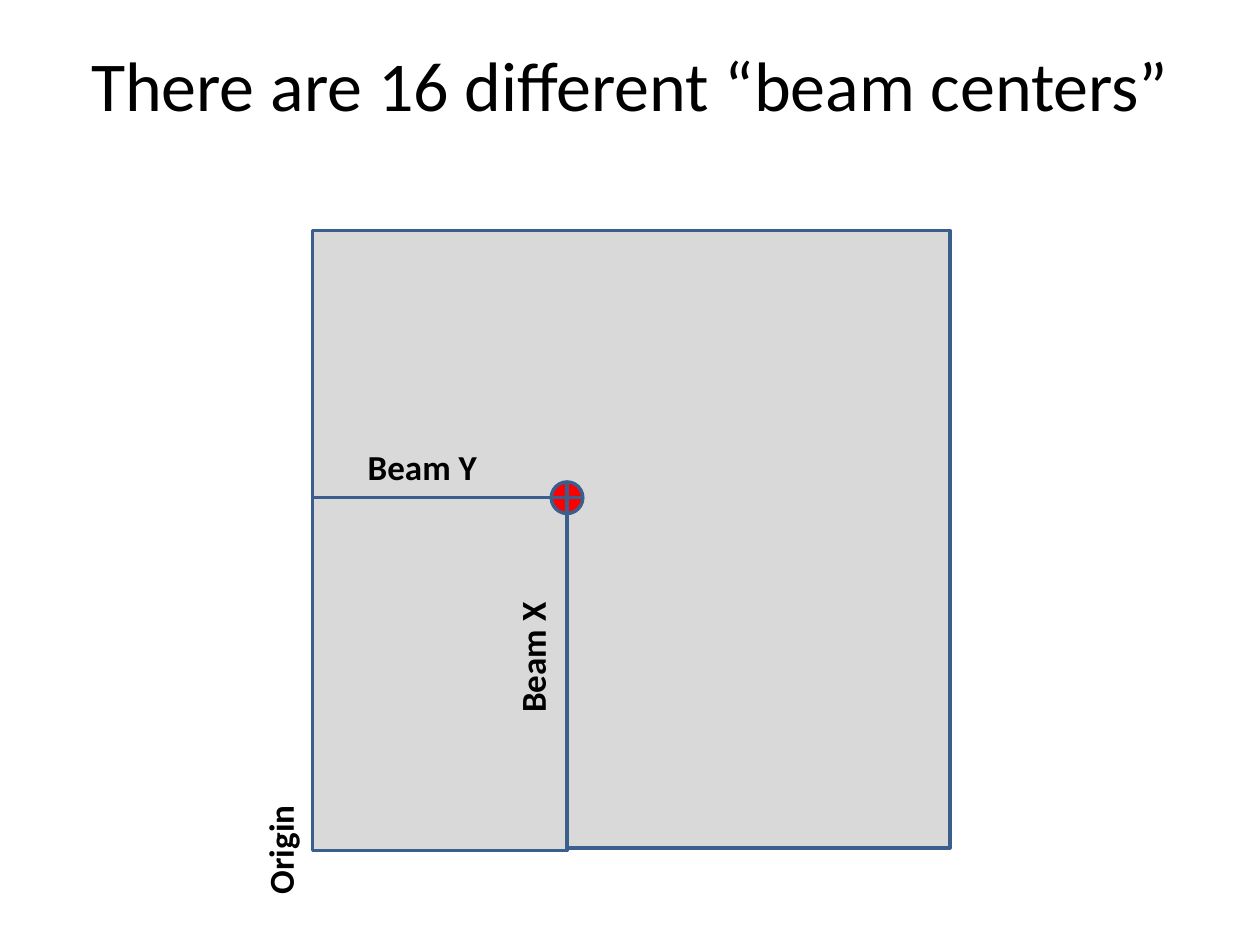
from dataclasses import dataclass

from pptx import Presentation
from pptx.dml.color import RGBColor
from pptx.enum.shapes import MSO_SHAPE
from pptx.enum.text import MSO_ANCHOR, MSO_AUTO_SIZE, PP_ALIGN
from pptx.util import Inches, Pt

BLACK = RGBColor(0x00, 0x00, 0x00)
GREY = RGBColor(0xD9, 0xD9, 0xD9)
RED = RGBColor(0xFF, 0x00, 0x00)
BLUE = RGBColor(0x3A, 0x5F, 0x8C)

WIDTH, HEIGHT = 10, 7.5
DETECTOR_LEFT = 2.48
BEAM_X, BEAM_Y = 4.5, 3.95
MARKER = 0.25


@dataclass(frozen=True)
class Area:
    """Place on the slide, in inches."""
    left: float
    top: float
    width: float
    height: float

    def lengths(self) -> list:
        return [Inches(v) for v in (self.left, self.top, self.width, self.height)]


@dataclass(frozen=True)
class Figure:
    kind: MSO_SHAPE
    area: Area
    fill: RGBColor


@dataclass(frozen=True)
class Label:
    text: str
    area: Area
    rotation: int = 0


FIGURES = [
    Figure(MSO_SHAPE.RECTANGLE, Area(DETECTOR_LEFT, 1.83, 5.06, 4.9), GREY),
    Figure(MSO_SHAPE.RECTANGLE,
           Area(DETECTOR_LEFT, BEAM_Y, BEAM_X - DETECTOR_LEFT, 2.8), GREY),
    Figure(MSO_SHAPE.FLOWCHART_OR,
           Area(BEAM_X - MARKER / 2, BEAM_Y - MARKER / 2, MARKER, MARKER), RED),
]
LABELS = [
    Label("Origin", Area(1.71, 6.46, 1.03, 0.44), 270),
    Label("Beam Y", Area(2.82, 3.49, 1.08, 0.44)),
    Label("Beam X", Area(3.68, 4.99, 1.09, 0.44), 270),
]


def add_figure(shapes, figure: Figure) -> None:
    shape = shapes.add_shape(figure.kind, *figure.area.lengths())
    shape.shadow.inherit = False
    shape.fill.solid()
    shape.fill.fore_color.rgb = figure.fill
    shape.line.color.rgb = BLUE
    shape.line.width = Pt(2)


def add_text(shapes, text: str, area: Area, *, size: int, bold: bool = False,
             wrap: bool = False, rotation: int = 0,
             align: PP_ALIGN = PP_ALIGN.LEFT,
             anchor: MSO_ANCHOR = MSO_ANCHOR.TOP,
             fit: MSO_AUTO_SIZE = MSO_AUTO_SIZE.NONE) -> None:
    box = shapes.add_textbox(*area.lengths())
    box.rotation = rotation
    frame = box.text_frame
    frame.word_wrap = wrap
    frame.auto_size = fit
    frame.vertical_anchor = anchor
    paragraph = frame.paragraphs[0]
    paragraph.alignment = align
    span = paragraph.add_run()
    span.text = text
    span.font.name = "Calibri"
    span.font.size = Pt(size)
    span.font.bold = bold
    span.font.color.rgb = BLACK


def main() -> None:
    deck = Presentation()
    deck.slide_width, deck.slide_height = Inches(WIDTH), Inches(HEIGHT)
    page = deck.slides.add_slide(deck.slide_layouts[6])
    add_text(page.shapes, "There are 16 different “beam centers”",
             Area(0, 0, WIDTH, 1.32), size=40, wrap=True,
             align=PP_ALIGN.CENTER, anchor=MSO_ANCHOR.MIDDLE)
    diagram = page.shapes.add_group_shape()
    for figure in FIGURES:
        add_figure(diagram.shapes, figure)
    for label in LABELS:
        add_text(diagram.shapes, label.text, label.area, size=20, bold=True,
                 rotation=label.rotation, fit=MSO_AUTO_SIZE.SHAPE_TO_FIT_TEXT)
    deck.save("out.pptx")


if __name__ == "__main__":
    main()
